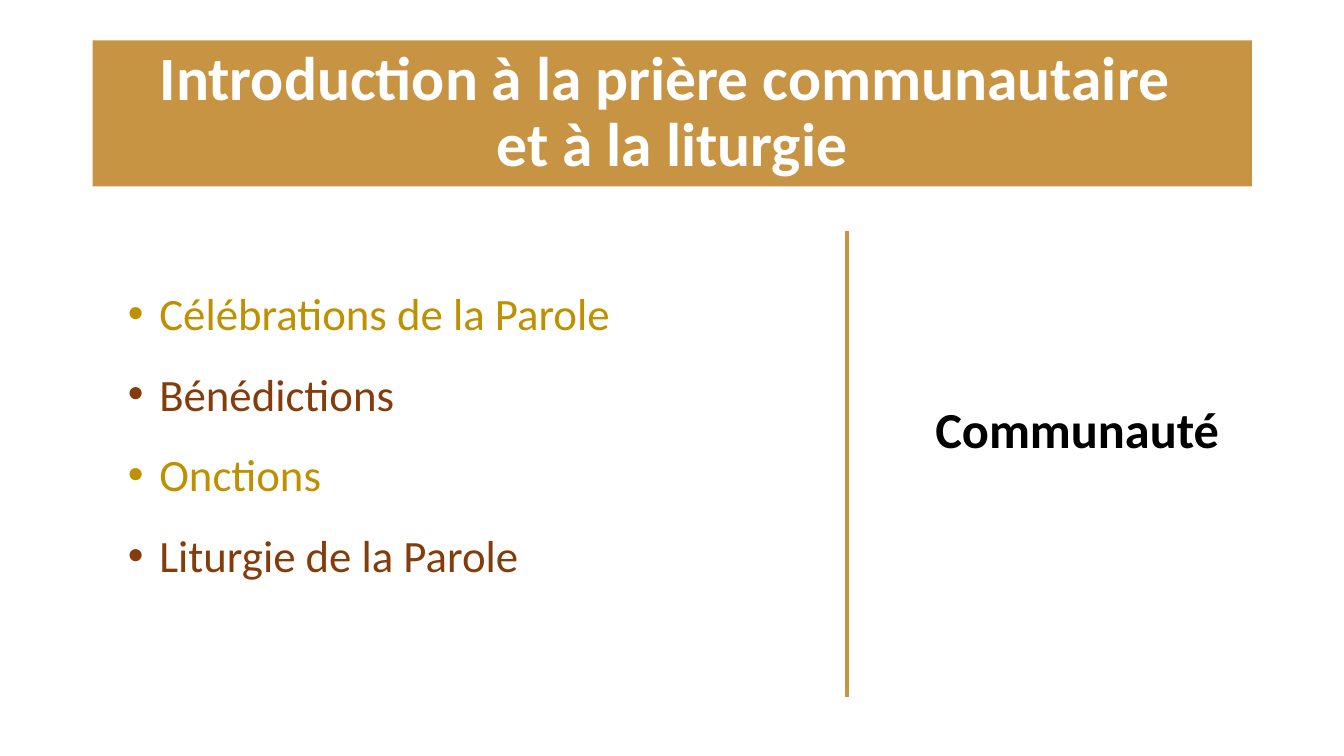
"""Build the slide introducing community prayer and liturgy."""
from dataclasses import dataclass
from typing import Optional

from lxml.etree import SubElement
from pptx import Presentation
from pptx.dml.color import RGBColor
from pptx.enum.shapes import MSO_CONNECTOR, MSO_SHAPE
from pptx.enum.text import MSO_ANCHOR, PP_ALIGN
from pptx.oxml.ns import qn
from pptx.slide import Slide
from pptx.util import Pt

COLOURS = {
    "ochre": "C79443",
    "white": "FFFFFF",
    "black": "000000",
    "gold": "BF9000",
    "brown": "843C0B",
}
BULLET_INDENT = Pt(22.5)


@dataclass
class Line:
    text: str
    colour: str


@dataclass
class Block:
    left: float
    top: float
    width: float
    height: float
    lines: list[Line]
    size: float
    bold: bool = False
    fill: Optional[str] = None
    bulleted: bool = False
    anchor: MSO_ANCHOR = MSO_ANCHOR.TOP
    alignment: PP_ALIGN = PP_ALIGN.LEFT
    spacing: float = 1.0


BLOCKS = [
    Block(66.24, 28.8, 828, 104.4,
          [Line("Introduction à la prière communautaire \vet à la liturgie", "white")],
          size=44, bold=True, fill="ochre", anchor=MSO_ANCHOR.MIDDLE,
          alignment=PP_ALIGN.CENTER, spacing=0.9),
    Block(661, 280.8, 225.4, 51.1, [Line("Communauté", "black")], size=36, bold=True),
    Block(84.24, 181.44, 552.24, 278.64,
          [Line("Célébrations de la Parole", "gold"),
           Line("Bénédictions", "brown"),
           Line("Onctions", "gold"),
           Line("Liturgie de la Parole", "brown")],
          size=32, bulleted=True, spacing=1.5),
]


def colour(name: str) -> RGBColor:
    return RGBColor.from_string(COLOURS[name])


def add_bullet(para) -> None:
    properties = para._p.get_or_add_pPr()
    properties.set("marL", str(BULLET_INDENT))
    properties.set("indent", str(-BULLET_INDENT))
    SubElement(properties, qn("a:buFont"), typeface="Arial")
    SubElement(properties, qn("a:buChar"), char="•")


def add_block(page: Slide, block: Block) -> None:
    place = [Pt(length) for length in (block.left, block.top, block.width, block.height)]
    if block.fill:
        box = page.shapes.add_shape(MSO_SHAPE.RECTANGLE, *place)
        box.shadow.inherit = False
        box.fill.solid()
        box.fill.fore_color.rgb = colour(block.fill)
        box.line.fill.background()
    else:
        box = page.shapes.add_textbox(*place)
    frame = box.text_frame
    frame.word_wrap = True
    frame.vertical_anchor = block.anchor
    font_format = {"name": "Calibri", "size": Pt(block.size), "bold": block.bold}
    for index, line in enumerate(block.lines):
        para = frame.add_paragraph() if index else frame.paragraphs[0]
        para.text = line.text
        para.alignment = block.alignment
        para.line_spacing = block.spacing
        if block.bulleted:
            add_bullet(para)
        for span in para.runs:
            for attribute, value in font_format.items():
                setattr(span.font, attribute, value)
            span.font.color.rgb = colour(line.colour)


def add_divider(page: Slide, x: float, top: float, bottom: float) -> None:
    divider = page.shapes.add_connector(
        MSO_CONNECTOR.STRAIGHT, Pt(x), Pt(top), Pt(x), Pt(bottom))
    divider.line.color.rgb = colour("ochre")
    divider.line.width = Pt(3)
    SubElement(divider._element.spPr, qn("a:effectLst"))


def main() -> None:
    deck = Presentation()
    deck.slide_width, deck.slide_height = Pt(960), Pt(540)
    page = deck.slides.add_slide(deck.slide_layouts[6])
    for block in BLOCKS:
        add_block(page, block)
    add_divider(page, 604.8, 164.9, 498.2)
    deck.save("out.pptx")


if __name__ == "__main__":
    main()
